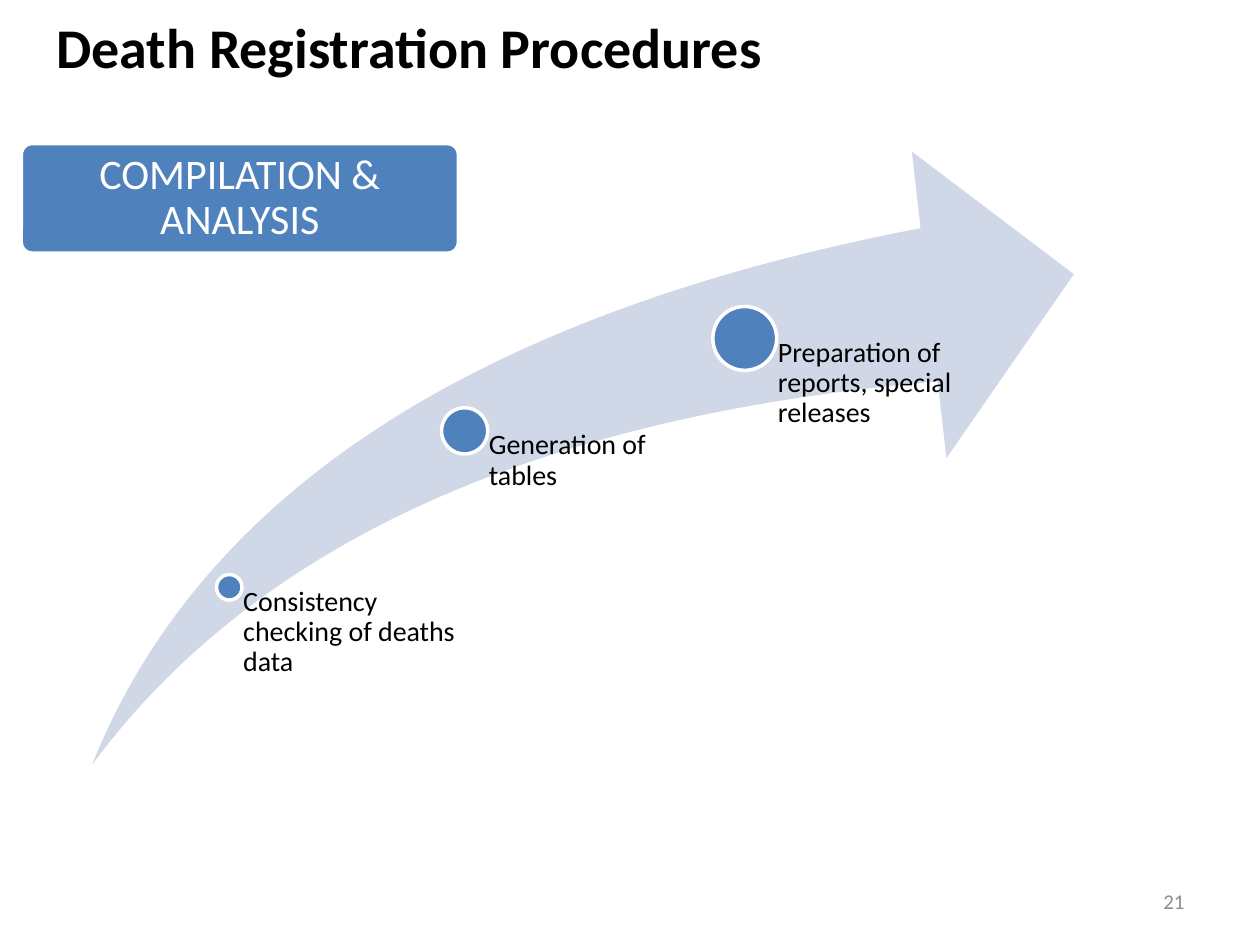
from dataclasses import dataclass

from pptx import Presentation
from pptx.dml.color import RGBColor
from pptx.enum.shapes import MSO_SHAPE
from pptx.enum.text import MSO_ANCHOR, PP_ALIGN
from pptx.shapes.autoshape import Shape
from pptx.slide import Slide
from pptx.text.text import TextFrame
from pptx.util import Pt

COLORS = {
    "black": "000000",
    "white": "FFFFFF",
    "blue": "4F81BD",
    "pale_blue": "D0D8E8",
    "gray": "8C8C8C",
}
FONT = "Calibri"
SWOOSH_BOTTOM = 437
LABEL_GAP = 0.7


@dataclass(frozen=True)
class Step:
    label: str
    center_x: float
    center_y: float
    diameter: float
    label_width: float


STEPS = [
    Step("Consistency checking of deaths data", 131, 335.6, 14.6, 131),
    Step("Generation of tables", 265.5, 246.2, 26.4, 135),
    Step("Preparation of reports, special releases", 425.6, 193.4, 36.5, 135),
]


def color(name: str) -> RGBColor:
    return RGBColor.from_string(COLORS[name])


def set_text(frame: TextFrame, text: str, size: float, color_name: str,
             align: PP_ALIGN = PP_ALIGN.LEFT, bold: bool = False,
             line_spacing: float = 1.0) -> None:
    frame.word_wrap = True
    frame.text = text
    paragraph = frame.paragraphs[0]
    paragraph.alignment = align
    paragraph.line_spacing = line_spacing
    font = paragraph.runs[0].font
    font.name = FONT
    font.size = Pt(size)
    font.bold = bold
    font.color.rgb = color(color_name)


def set_margins(frame: TextFrame, left: float, top: float,
                right: float, bottom: float) -> None:
    frame.margin_left, frame.margin_top = Pt(left), Pt(top)
    frame.margin_right, frame.margin_bottom = Pt(right), Pt(bottom)


def add_filled(slide: Slide, preset: MSO_SHAPE, left: float, top: float,
               width: float, height: float, fill: str,
               outlined: bool = True) -> Shape:
    shape = slide.shapes.add_shape(preset, Pt(left), Pt(top), Pt(width), Pt(height))
    shape.shadow.inherit = False
    shape.fill.solid()
    shape.fill.fore_color.rgb = color(fill)
    if outlined:
        shape.line.color.rgb = color("white")
        shape.line.width = Pt(2)
    else:
        shape.line.fill.background()
    return shape


def add_step(slide: Slide, step: Step) -> None:
    radius = step.diameter / 2
    add_filled(slide, MSO_SHAPE.OVAL, step.center_x - radius,
               step.center_y - radius, step.diameter, step.diameter, "blue")
    label = slide.shapes.add_textbox(
        Pt(step.center_x), Pt(step.center_y),
        Pt(step.label_width), Pt(SWOOSH_BOTTOM - step.center_y))
    set_margins(label.text_frame, radius + LABEL_GAP, 0, 0, 0)
    set_text(label.text_frame, step.label, 16, "black", line_spacing=0.9)


def add_title(slide: Slide) -> None:
    title = slide.shapes.title
    title.left, title.top = Pt(25), Pt(3.6)
    title.width, title.height = Pt(573), Pt(62.6)
    title.text_frame.vertical_anchor = MSO_ANCHOR.TOP
    set_text(title.text_frame, "Death Registration Procedures", 32, "black", bold=True)


def add_stage(slide: Slide) -> None:
    stage = add_filled(slide, MSO_SHAPE.ROUNDED_RECTANGLE,
                       12.2, 82.1, 249.8, 62.6, "blue")
    stage.adjustments[0] = 0.1
    stage.text_frame.vertical_anchor = MSO_ANCHOR.MIDDLE
    set_margins(stage.text_frame, 2.2, 2.2, 2.2, 2.2)
    set_text(stage.text_frame, "COMPILATION & ANALYSIS", 24, "white",
             PP_ALIGN.CENTER, line_spacing=0.9)


def add_page_number(slide: Slide) -> None:
    number = slide.shapes.add_textbox(Pt(516), Pt(500.5), Pt(168), Pt(28.8))
    number.text_frame.vertical_anchor = MSO_ANCHOR.MIDDLE
    set_text(number.text_frame, "21", 12, "gray", PP_ALIGN.RIGHT)


def main() -> None:
    deck = Presentation()
    deck.slide_width, deck.slide_height = Pt(720), Pt(540)
    slide = deck.slides.add_slide(deck.slide_layouts[5])

    add_title(slide)
    swoosh = add_filled(slide, MSO_SHAPE.SWOOSH_ARROW, 52.6, 86.6, 561,
                        SWOOSH_BOTTOM - 86.6, "pale_blue", outlined=False)
    swoosh.adjustments[0] = 0.25
    swoosh.adjustments[1] = 0.25
    for step in STEPS:
        add_step(slide, step)
    add_stage(slide)
    add_page_number(slide)

    deck.save("out.pptx")


if __name__ == "__main__":
    main()
